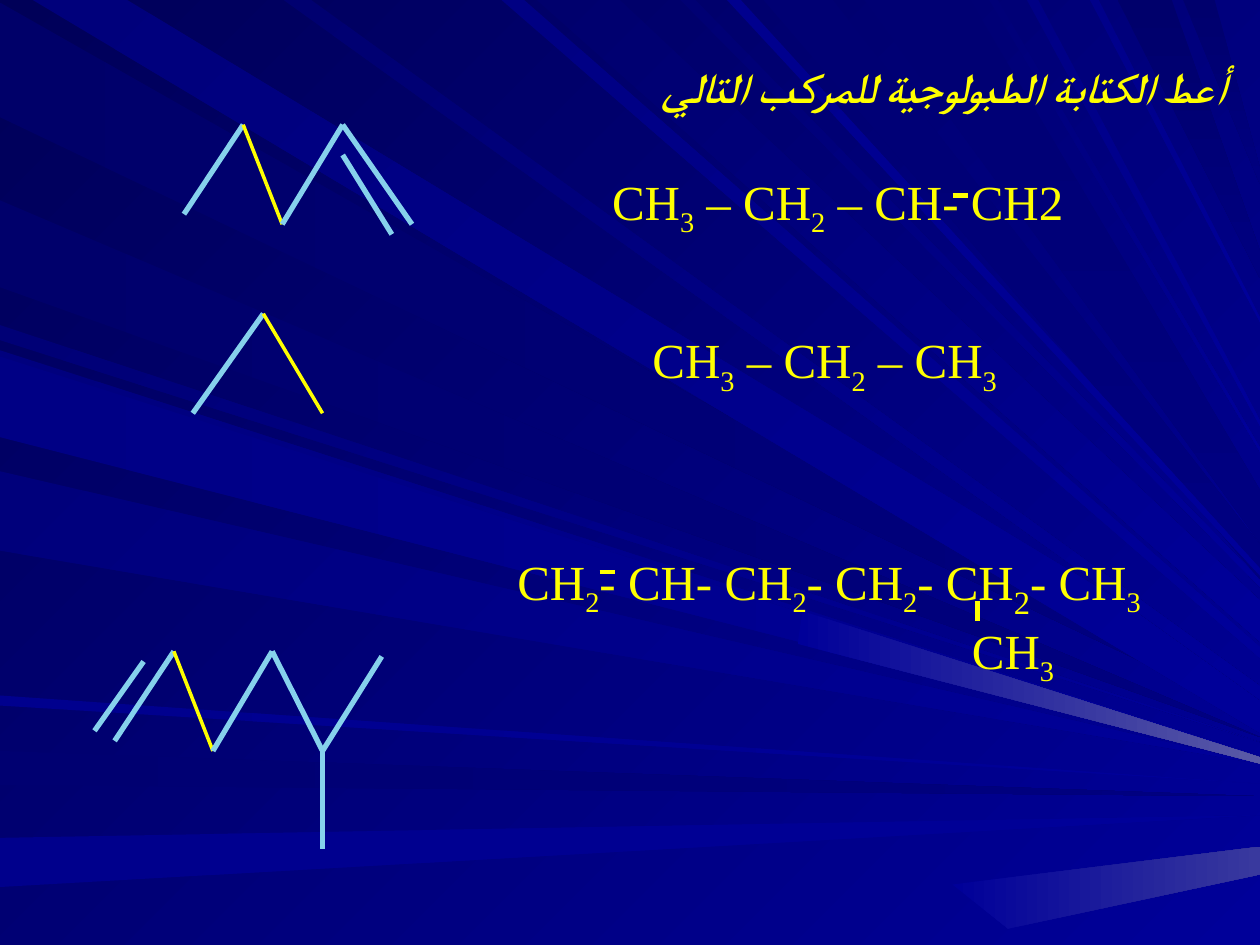
import dataclasses
import itertools

import pptx
import pptx.dml.color
import pptx.enum.shapes
import pptx.enum.text
import pptx.oxml.ns
import pptx.util
from lxml import etree
from pptx.util import Inches


@dataclasses.dataclass(frozen=True)
class Theme:
    """Colours, font and type sizes of the slide."""
    font: str = "Times New Roman"
    text: str = "FFFF00"
    bond: str = "86D1EC"
    dark: str = "000058"
    mid: str = "000080"
    light: str = "000099"
    glow: str = "5A5AA6"
    haze: str = "39399E"
    title: int = 24
    formula: int = 28
    big_sub: int = 32
    subscript: str = "-25000"
    bond_width: float = 3
    single_width: float = 2
    mark_width: float = 2.75


THEME = Theme()

LEFT_RAYS = [
    ("000069", THEME.mid, 0, 0.02, 0.93, 5.7),
    ("00006B", THEME.mid, 0, 1.59, 2.28, 5.85),
    ("000076", THEME.light, 45, 2.58, 2.7, 5.89),
    ("000071", THEME.mid, 0, 5.96, 6.23, 6.32),
    ("00008C", THEME.light, 0, 6.65, 7.04, 6.47),
    ("00007E", THEME.light, 45, 2.78, 3.42, 6),
    ("00007B", THEME.light, 45, 3.74, 4.37, 6.06),
    ("00008E", THEME.light, 0, 5.52, 5.6, 6.22),
    ("000085", THEME.light, 0, 2.83, 3.47, 6.03),
]
TOP_RAYS = [
    ("00007B", THEME.light, 45, 0.26, 1.01, 5.63),
    ("000083", THEME.light, 45, 3.98, 4.16, 5.18),
    ("00006D", THEME.light, 45, 4.26, 4.92, 4.93),
    ("000073", THEME.light, 45, 5.4, 5.52, 4.63),
    ("000073", THEME.mid, 90, 6.06, 6.61, 4.46),
    ("00006B", THEME.mid, 90, 8.87, 9.3, 2.1),
    ("00006D", THEME.mid, 90, 9.39, 9.64, 1.4),
    ("000070", THEME.light, 45, 2.25, 2.47, 5.5),
    ("00008E", THEME.light, 45, 5.77, 5.88, 4.54),
    ("000073", THEME.mid, 90, 6.86, 7.7, 4.1),
    ("000078", THEME.light, 45, 7.85, 7.92, 3.57),
    ("000085", THEME.light, 45, 8.15, 8.24, 3.36),
    ("00008A", THEME.light, 45, 8.65, 8.72, 2.54),
]


def rgb(code):
    """Turn a hex code into a colour."""
    return pptx.dml.color.RGBColor.from_string(code)


def paint(fill, start, end, angle):
    """Fill with a clockwise two-colour gradient."""
    fill.gradient()
    fill.gradient_angle = -angle % 360
    for stop, code in zip(fill.gradient_stops, (start, end)):
        stop.color.rgb = rgb(code)


def add_ray(group, points, start, end, angle):
    """Draw one outlined area of the fan."""
    first, *rest = [(Inches(x), Inches(y)) for x, y in points]
    builder = group.shapes.build_freeform(*first)
    builder.add_line_segments(rest, close=True)
    sp = builder.convert_to_shape()
    sp.shadow.inherit = False
    sp.line.fill.background()
    paint(sp.fill, start, end, angle)


def add_background(s, left, top, width):
    """Paint the background and the fan of rays behind everything."""
    paint(s.background.fill, THEME.dark, THEME.light, 45)
    group = s.shapes.add_group_shape()
    right = left + width
    for start, end, angle, a, b, tip in LEFT_RAYS:
        points = [(left, top + a), (left, top + b), (right, top + tip)]
        add_ray(group, points, start, end, angle)
    for start, end, angle, a, b, tip in TOP_RAYS:
        spread = (b - a) / 4
        points = [(left + a, top), (left + b, top),
                  (right, top + tip - spread), (right, top + tip + spread)]
        add_ray(group, points, start, end, angle)
    add_ray(group, [(6.37, 4.85), (6.33, 5.11), (right, 6.06), (right, 6.01)],
            THEME.light, THEME.glow, 0)
    add_ray(group, [(7.56, 7.02), (8, 7.37), (right, 6.94), (right, 6.72)],
            THEME.light, THEME.haze, 0)
    s.shapes.element.insert(2, group.element)


def add_run(p, text, size, sub=False):
    """Add one run in the slide's font, optionally as a subscript."""
    r = p.add_run()
    r.text = text
    r.font.name = THEME.font
    r.font.size = pptx.util.Pt(size)
    r.font.color.rgb = rgb(THEME.text)
    if sub:
        r.font._element.set("baseline", THEME.subscript)
    return r


def add_title(s, left, top, width, height, text):
    """Place the right-to-left title."""
    sp = s.shapes.title
    sp.left, sp.top, sp.width, sp.height = map(Inches, (left, top, width, height))
    tf = sp.text_frame
    tf.word_wrap = True
    tf.auto_size = pptx.enum.text.MSO_AUTO_SIZE.SHAPE_TO_FIT_TEXT
    tf.vertical_anchor = pptx.enum.text.MSO_ANCHOR.TOP
    p = tf.paragraphs[0]
    p.alignment = pptx.enum.text.PP_ALIGN.RIGHT
    p._p.get_or_add_pPr().set("rtl", "1")
    r = add_run(p, text, THEME.title)
    r.font.bold = r.font.italic = True
    cs = etree.SubElement(r.font._element, pptx.oxml.ns.qn("a:cs"))
    cs.set("typeface", THEME.font)


def add_formula(s, left, top, width, height, lines, align="LEFT"):
    """Write lines of (indent, parts), where every second part is a subscript."""
    tf = s.shapes.add_textbox(*map(Inches, (left, top, width, height))).text_frame
    tf.word_wrap = True
    for i, (indent, parts) in enumerate(lines):
        p = tf.add_paragraph() if i else tf.paragraphs[0]
        p.alignment = pptx.enum.text.PP_ALIGN[align]
        if indent:
            p._p.get_or_add_pPr().set("marL", str(Inches(indent)))
        for j, part in enumerate(parts):
            text, size = part if isinstance(part, tuple) else (part, THEME.formula)
            add_run(p, text, size, sub=j % 2 == 1)


def add_line(s, start, end, color, width):
    """Draw one straight line without a shadow."""
    line = s.shapes.add_connector(
        pptx.enum.shapes.MSO_CONNECTOR.STRAIGHT, *map(Inches, start + end))
    line.line.color.rgb = rgb(color)
    line.line.width = pptx.util.Pt(width)
    etree.SubElement(line.element.spPr, pptx.oxml.ns.qn("a:effectLst"))


def add_skeleton(s, left, top, chain, extras=()):
    """Draw a zigzag chain, its second bond in yellow, and extra bonds."""
    bonds = [*itertools.pairwise(chain), *extras]
    for i, ((x1, y1), (x2, y2)) in enumerate(bonds):
        style = (THEME.text, THEME.single_width) if i == 1 else (THEME.bond, THEME.bond_width)
        add_line(s, (left + x1, top + y1), (left + x2, top + y2), *style)


def add_mark(s, left, top, width, height):
    """Draw a short stroke that completes a bond in a formula."""
    add_line(s, (left, top), (left + width, top + height), THEME.text, THEME.mark_width)


def main():
    """Build and save the slide."""
    prs = pptx.Presentation()
    prs.slide_width, prs.slide_height = Inches(10), Inches(7.5)
    s = prs.slides.add_slide(prs.slide_layouts[5])
    add_background(s, 0, 0, 10)
    add_title(s, 4.84, 0.44, 4.96, 0.5, "أعط الكتابة الطبولوجية للمركب التالي")
    add_formula(s, 4.76, 1.31, 4.88, 0.57, [(0, ["CH", "3", " – CH", "2", " – CH- CH2"])])
    add_formula(s, 5.08, 2.57, 4.02, 0.57, [(0, ["CH", "3", " – CH", "2", " – CH", "3"])])
    add_formula(s, 3.35, 4.27, 6.46, 1.2, [
        (0, ["CH", "2", "- CH- CH", "2", "- CH", "2", "- CH", ("2", THEME.big_sub), "- CH", "3"]),
        (2.92, ["CH", "3"]),
    ], "CENTER")
    add_mark(s, 7.56, 1.55, 0.12, 0)
    add_mark(s, 4.76, 4.54, 0.12, 0)
    add_mark(s, 7.76, 4.77, 0, 0.16)
    add_skeleton(s, 1.46, 0.99, [(0, 0.71), (0.47, 0), (0.78, 0.79), (1.26, 0), (1.81, 0.79)],
                 [((1.26, 0.24), (1.65, 0.87))])
    add_skeleton(s, 1.53, 2.49, [(0, 0.79), (0.56, 0), (1.03, 0.79)])
    fork = (1.81, 0.79)
    add_skeleton(s, 0.75, 5.17, [(0.16, 0.71), (0.63, 0), (0.94, 0.79), (1.41, 0), fork, (2.28, 0.04)],
                 [((0, 0.63), (0.39, 0.08)), (fork, (1.81, 1.57))])
    prs.save("out.pptx")


if __name__ == "__main__":
    main()
